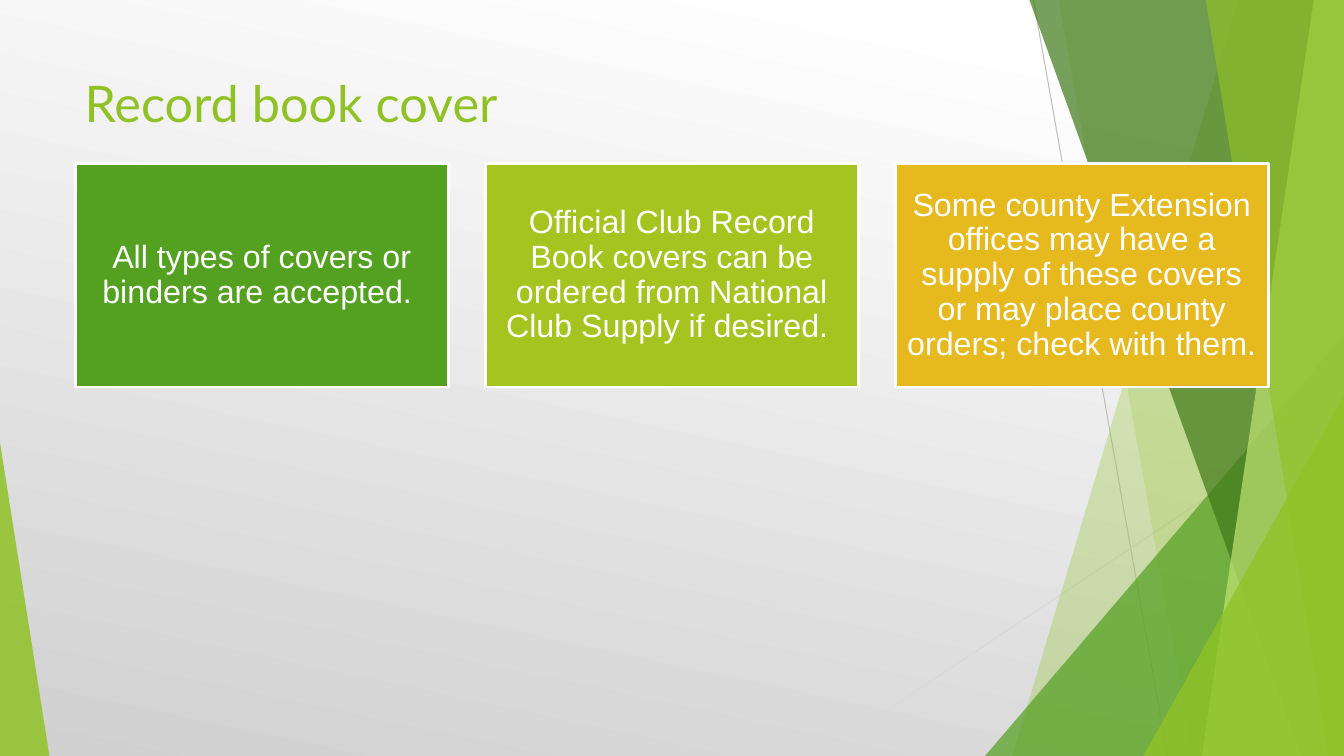
from lxml import etree
from pptx import Presentation
from pptx.dml.color import RGBColor
from pptx.enum.shapes import MSO_CONNECTOR, MSO_SHAPE
from pptx.enum.text import MSO_ANCHOR, PP_ALIGN
from pptx.oxml.ns import qn
from pptx.util import Inches, Pt

STRAIGHT = MSO_CONNECTOR.STRAIGHT
RECT, TRIANGLE = MSO_SHAPE.RECTANGLE, MSO_SHAPE.ISOSCELES_TRIANGLE
TOP, MIDDLE = MSO_ANCHOR.TOP, MSO_ANCHOR.MIDDLE
CENTER, LEFT = PP_ALIGN.CENTER, PP_ALIGN.LEFT
SLIDE_W, SLIDE_H = 13.33, 7.5
LIME, GREEN = "90C226", "54A021"

COVERS = [
    ("All types of covers or binders are accepted. ", GREEN),
    ("Official Club Record Book covers can be ordered from National Club "
     "Supply if desired. ", "A5C41F"),
    ("Some county Extension offices may have a supply of these covers or may "
     "place county orders; check with them. ", "E6B91E"),
]


def rgb(hex_colour):
    return RGBColor.from_string(hex_colour)


def paint(sp, colour, opacity):
    """Fill a borderless shape with a translucent colour."""
    sp.shadow.inherit = False
    sp.line.fill.background()
    sp.fill.solid()
    sp.fill.fore_color.rgb = rgb(colour)
    clr = sp._element.spPr.find(qn("a:solidFill"))[0]
    etree.SubElement(clr, qn("a:alpha")).set("val", str(opacity * 1000))


def add_line(slide, x1, y1, x2, y2, colour):
    line = slide.shapes.add_connector(
        STRAIGHT, Inches(x1), Inches(y1), Inches(x2), Inches(y2))
    line.line.color.rgb = rgb(colour)
    line.line.width = Pt(0.75)
    etree.SubElement(line._element.spPr, qn("a:effectLst"))


def add_facet(slide, right, height, top_x, bottom_x, colour, opacity):
    """Full-height band from a slanted left side to the right edge."""
    corners = [(right, 0), (right, height), (bottom_x, height)]
    builder = slide.shapes.build_freeform(Inches(top_x), 0, scale=1.0)
    builder.add_line_segments([(Inches(x), Inches(y)) for x, y in corners])
    paint(builder.convert_to_shape(), colour, opacity)


def add_corner(slide, left, top, right, bottom, apex, colour, opacity):
    """Triangle standing in a bottom corner, apex 0 left or 1 right."""
    sp = slide.shapes.add_shape(
        TRIANGLE, Inches(left), Inches(top),
        Inches(right - left), Inches(bottom - top))
    sp.adjustments[0] = apex
    paint(sp, colour, opacity)


def add_backdrop(slide, width, height):
    fill = slide.background.fill
    fill.gradient()
    fill.gradient_angle = 258
    for stop, position, colour in zip(
            fill.gradient_stops, (0.1, 1), ("FFFFFF", "D0D0D0")):
        stop.position = position
        stop.color.rgb = rgb(colour)

    # Thin lines behind the facets
    add_line(slide, 10.25, 0, 11.58, height, "BFBFBF")
    add_line(slide, width, 4.03, 8.12, height, "D9D9D9")

    # Overlapping facets on the right
    add_facet(slide, width, height, 12.28, 10.04, LIME, 30)
    add_facet(slide, width, height, 10.5, 11.83, LIME, 20)
    add_corner(slide, 9.77, 3.33, width, height, 1, GREEN, 72)
    add_facet(slide, width, height, 10.21, 12.91, "3F7819", 70)
    add_facet(slide, width, height, 13.03, 11.92, "C0E474", 70)
    add_facet(slide, width, height, 11.96, 13.18, LIME, 65)
    add_corner(slide, 11.34, 3.93, width, height, 1, LIME, 80)

    # Wedge on the left
    add_corner(slide, 0, 4.39, 0.49, height, 0, LIME, 85)


def set_text(sp, text, font, size, colour, align, anchor):
    tf = sp.text_frame
    tf.word_wrap = True
    tf.vertical_anchor = anchor
    tf.text = text
    p = tf.paragraphs[0]
    p.alignment = align
    r = p.runs[0]
    r.font.name, r.font.size = font, Pt(size)
    r.font.color.rgb = rgb(colour)
    return tf


def add_title(slide, left, top, width, height):
    sp = slide.shapes.add_textbox(
        Inches(left), Inches(top), Inches(width), Inches(height))
    set_text(sp, "Record book cover", "Lato", 36, LIME, LEFT, TOP)


def add_cards(slide, left, top, width, height):
    """Equal cards in a row, each gap a tenth of a card."""
    card_w = width / (len(COVERS) * 1.1 - 0.1)
    for i, (text, colour) in enumerate(COVERS):
        sp = slide.shapes.add_shape(
            RECT, Inches(left + i * card_w * 1.1), Inches(top),
            Inches(card_w), Inches(height))
        sp.shadow.inherit = False
        sp.fill.solid()
        sp.fill.fore_color.rgb = rgb(colour)
        sp.line.color.rgb = rgb("FFFFFF")
        sp.line.width = Pt(2)
        tf = set_text(sp, text, "Arial", 23, "FFFFFF", CENTER, MIDDLE)
        tf.margin_left = tf.margin_right = Inches(0.1)
        tf.margin_top = tf.margin_bottom = Inches(0.1)
        tf.paragraphs[0].line_spacing = 0.9


def main():
    prs = Presentation()
    prs.slide_width, prs.slide_height = Inches(SLIDE_W), Inches(SLIDE_H)
    slide = prs.slides.add_slide(prs.slide_layouts[6])
    add_backdrop(slide, SLIDE_W, SLIDE_H)
    add_title(slide, 0.74, 0.67, 9.4, 1.44)
    add_cards(slide, 0.75, 1.62, 11.83, 2.22)
    prs.save("out.pptx")


if __name__ == "__main__":
    main()
